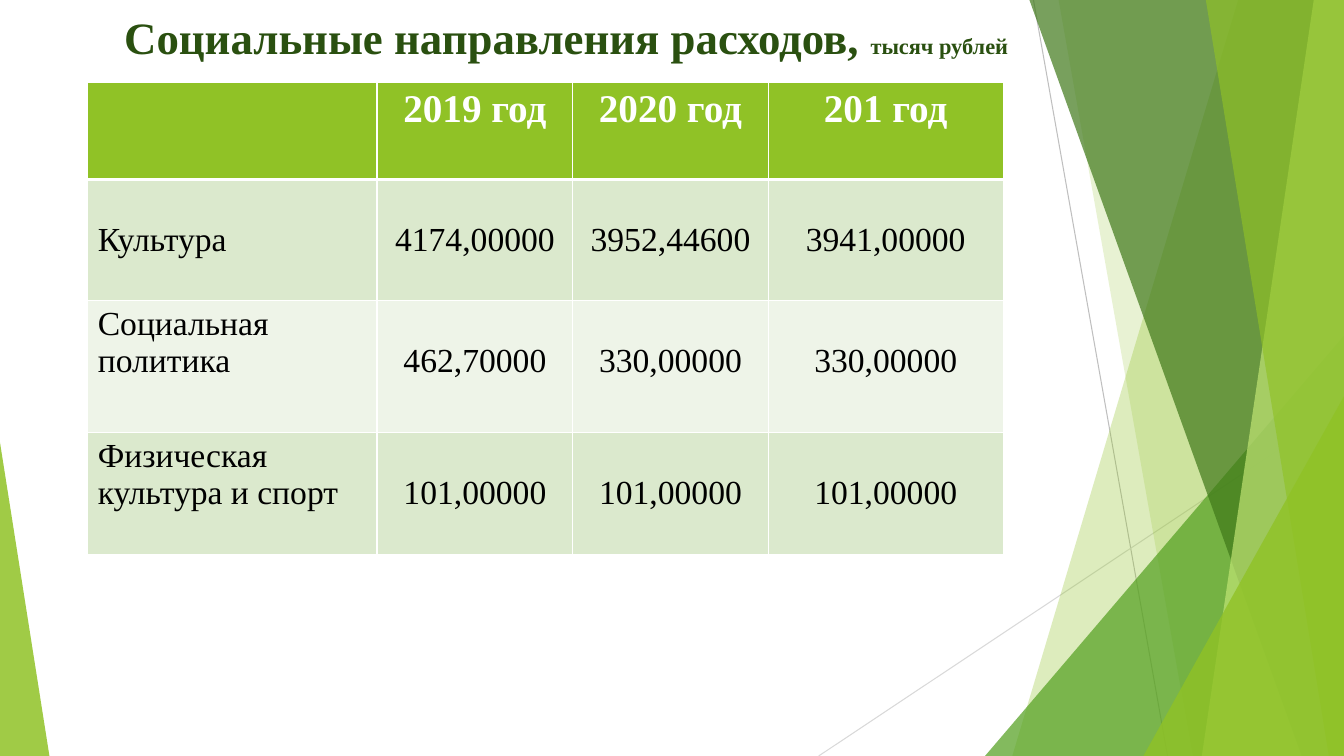
from lxml import etree
from pptx import Presentation, util as u
from pptx.dml.color import RGBColor
from pptx.enum import shapes, text
from pptx.oxml.ns import qn

# Content
TITLE = [("Социальные направления расходов, ", "title"), ("тысяч рублей", "unit")]
ROWS = [
    ("", "2019 год", "2020 год", "201 год"),
    ("Культура", "4174,00000", "3952,44600", "3941,00000"),
    ("Социальная политика", "462,70000", "330,00000", "330,00000"),
    ("Физическая культура и спорт", "101,00000", "101,00000", "101,00000"),
]

# Theme
THEME = {
    "font": "Times New Roman",
    "size": {"title": 32, "unit": 16, "head": 28, "body": 24},
    "title": "2A5010", "head": "FFFFFF", "body": "000000", "rule": "FFFFFF",
    "head_fill": "90C226", "bands": ("DBE9CD", "EEF4E8"),
    "lime": "90C226", "green": "54A021", "dark": "3F7819", "pale": "C0E474",
}

# Layout in inches
W, H = 13.33, 7.5
TITLE_BOX = (0.34, 0, 10.55, 0.82)
TABLE_AT = (0.87, 0.82)
COLS = (2.87, 1.94, 1.94, 2.33)
HEIGHTS = (0.96, 1.2, 1.31, 1.21)
PAD, LINE = 0.05, 0.37  # cell inset and the drop of one text line

# Decoration: beams run from x at the top to x at the bottom, up to the right edge
HAIRLINES = [((10.25, 0), (11.58, H), "BFBFBF"), ((W, 4.03), (8.12, H), "D9D9D9")]
BEAMS_BACK = [(12.28, 10.04, "lime", 30), (10.5, 11.83, "lime", 20)]
BEAMS_FRONT = [(10.21, 12.91, "dark", 70), (13.03, 11.92, "pale", 70),
               (11.96, 13.18, "lime", 65)]
# Wedges: left, top, width, apex position, colour, opacity
WEDGE_MID = (9.77, 3.33, 3.56, 1, "green", 72)
WEDGES_FRONT = [(11.34, 3.93, 1.99, 1, "lime", 80), (0, 4.39, 0.49, 0, "lime", 85)]


def inches(*values):
    return [u.Inches(v) for v in values]


def rgb(value):
    return RGBColor.from_string(value)


def set_all(obj, **values):
    for name, value in values.items():
        setattr(obj, name, value)


def add_run(p, words, role, colour, bold):
    r = p.add_run()
    r.text = words
    set_all(r.font, name=THEME["font"], size=u.Pt(THEME["size"][role]), bold=bold)
    r.font.color.rgb = rgb(THEME[colour])


def paint(sp, colour, opacity):
    sp.shadow.inherit = False
    sp.fill.solid()
    sp.fill.fore_color.rgb = rgb(THEME[colour])
    sp.line.fill.background()
    clr = sp._element.spPr.find(qn("a:solidFill"))[0]
    etree.SubElement(clr, qn("a:alpha")).set("val", str(opacity * 1000))


def add_beam(s, top, bottom, colour, opacity):
    outline = [inches(*pt) for pt in ((W, 0), (W, H), (bottom, H))]
    builder = s.shapes.build_freeform(*inches(top, 0))
    builder.add_line_segments(outline, close=True)
    paint(builder.convert_to_shape(), colour, opacity)


def add_wedge(s, left, top, width, apex, colour, opacity):
    sp = s.shapes.add_shape(shapes.MSO_SHAPE.ISOSCELES_TRIANGLE,
                            *inches(left, top, width, H - top))
    sp.adjustments[0] = apex
    paint(sp, colour, opacity)


def add_hairline(s, start, end, colour):
    c = s.shapes.add_connector(shapes.MSO_CONNECTOR.STRAIGHT, *inches(*start, *end))
    c.line.width = u.Pt(0.75)
    c.line.color.rgb = rgb(colour)
    etree.SubElement(c._element.spPr, qn("a:effectLst"))


def set_borders(cell, bottom):
    tc_pr = cell._tc.get_or_add_tcPr()
    for i, side in enumerate("LRTB"):
        ln = etree.Element(qn("a:ln" + side))
        ln.set("w", str(u.Pt(bottom if side == "B" else 1)))
        fill = etree.SubElement(ln, qn("a:solidFill"))
        etree.SubElement(fill, qn("a:srgbClr")).set("val", THEME["rule"])
        tc_pr.insert(i, ln)


def add_table(s):
    frame = s.shapes.add_table(len(ROWS), len(COLS),
                               *inches(*TABLE_AT, sum(COLS), sum(HEIGHTS)))
    table = frame.table
    for col, width in zip(table.columns, COLS):
        col.width = u.Inches(width)
    for i, (row, height) in enumerate(zip(ROWS, HEIGHTS)):
        table.rows[i].height = u.Inches(height)
        role = "body" if i else "head"
        fill = THEME["bands"][(i - 1) % 2] if i else THEME["head_fill"]
        for j, words in enumerate(row):
            cell = table.cell(i, j)
            cell.fill.solid()
            cell.fill.fore_color.rgb = rgb(fill)
            set_borders(cell, 1 if i else 3)
            # Values, and the one-line label, sit one line lower
            lowered = i and (j or " " not in words)
            set_all(cell, vertical_anchor=text.MSO_ANCHOR.TOP,
                    margin_top=u.Inches(PAD + LINE if lowered else PAD))
            p = cell.text_frame.paragraphs[0]
            p.alignment = text.PP_ALIGN.CENTER if j else text.PP_ALIGN.LEFT
            if words:
                add_run(p, words, role, role, not i)


def add_title(s):
    title = s.shapes.title
    set_all(title, **dict(zip(("left", "top", "width", "height"), inches(*TITLE_BOX))))
    tf = title.text_frame
    set_all(tf, word_wrap=True, auto_size=text.MSO_AUTO_SIZE.NONE,
            vertical_anchor=text.MSO_ANCHOR.TOP, margin_top=u.Inches(0.1))
    p = tf.paragraphs[0]
    p.alignment = text.PP_ALIGN.CENTER
    for words, role in TITLE:
        add_run(p, words, role, "title", True)


def main():
    prs = Presentation()
    prs.slide_width, prs.slide_height = inches(W, H)
    s = prs.slides.add_slide(prs.slide_layouts[5])
    # Background decoration, back to front
    for line in HAIRLINES:
        add_hairline(s, *line)
    for beam in BEAMS_BACK:
        add_beam(s, *beam)
    add_wedge(s, *WEDGE_MID)
    for beam in BEAMS_FRONT:
        add_beam(s, *beam)
    for wedge in WEDGES_FRONT:
        add_wedge(s, *wedge)
    # Foreground
    add_title(s)
    add_table(s)
    prs.save("out.pptx")


if __name__ == "__main__":
    main()
